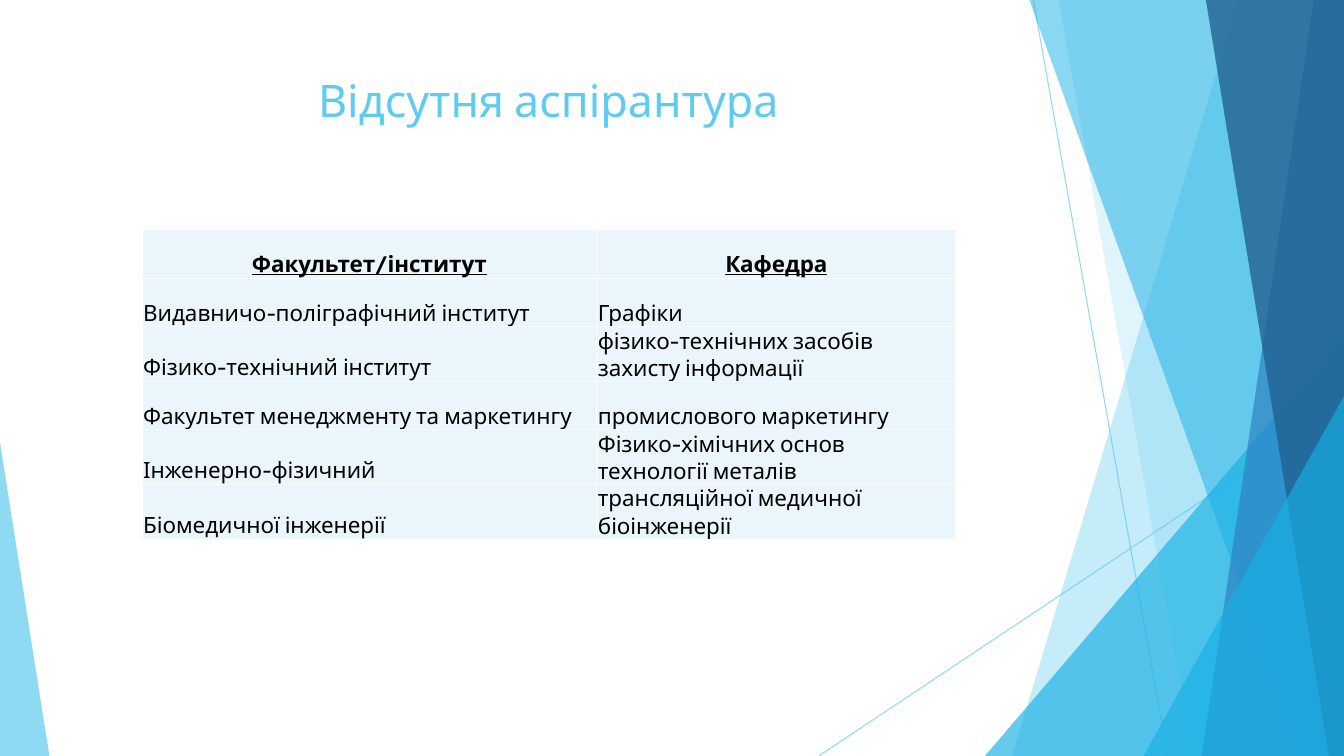
from lxml.etree import SubElement
from pptx import Presentation
from pptx.dml.color import RGBColor
from pptx.enum.shapes import MSO_CONNECTOR, MSO_SHAPE
from pptx.enum.text import MSO_ANCHOR, PP_ALIGN
from pptx.oxml import parse_xml
from pptx.oxml.ns import nsdecls, qn
from pptx.util import Inches, Pt

COLORS = {
    "sky": "5FCBEF",
    "cyan": "17B0E4",
    "blue": "2E83C3",
    "navy": "226292",
    "pale": "EAF6FC",
    "black": "000000",
    "white": "FFFFFF",
}

ROWS = [
    ("Факультет/інститут", "Кафедра"),
    ("Видавничо-поліграфічний інститут", "Графіки"),
    ("Фізико-технічний інститут", "фізико-технічних засобів захисту інформації"),
    ("Факультет менеджменту та маркетингу", "промислового маркетингу"),
    ("Інженерно-фізичний", "Фізико-хімічних основ технології металів"),
    ("Біомедичної інженерії", "трансляційної медичної біоінженерії"),
]


def color(name):
    return RGBColor.from_string(COLORS[name])


def fade(shape, alpha):
    """Set the opacity, in percent, of every colour in the shape."""
    for node in shape._element.spPr.iter(qn("a:srgbClr")):
        SubElement(node, qn("a:alpha"), val=str(alpha * 1000))


def write(frame, text, size=16, ink="black", bold=False, line=False,
          align=PP_ALIGN.LEFT, font="Cabin"):
    frame.word_wrap = True
    para = frame.paragraphs[0]
    para.alignment = align
    run = para.add_run()
    run.text = text
    style = run.font
    style.name, style.size = font, Pt(size)
    style.bold, style.underline = bold, line
    style.color.rgb = color(ink)


class Deck:
    """Draws on one slide; lengths are percent of its width and height."""

    def __init__(self, wide=13.33, high=7.5):
        self.file = Presentation()
        self.file.slide_width = Inches(wide)
        self.file.slide_height = Inches(high)
        self.slide = self.file.slides.add_slide(self.file.slide_layouts[6])
        self.shapes = self.slide.shapes
        self.slide.background.fill.solid()
        self.slide.background.fill.fore_color.rgb = color("white")

    def across(self, share):
        return round(self.file.slide_width * share / 100)

    def down(self, share):
        return round(self.file.slide_height * share / 100)

    def place(self, *shares):
        """Turn x, y pairs of shares into lengths."""
        return [self.down(s) if i % 2 else self.across(s)
                for i, s in enumerate(shares)]

    def paint(self, shape, fill, alpha):
        shape.shadow.inherit = False
        shape.fill.solid()
        shape.fill.fore_color.rgb = color(fill)
        shape.line.fill.background()
        fade(shape, alpha)

    def line(self, *ends):
        link = self.shapes.add_connector(MSO_CONNECTOR.STRAIGHT, *self.place(*ends))
        link.line.width = Pt(0.75)
        link.line.color.rgb = color("sky")
        fade(link, 70)
        SubElement(link._element.spPr, qn("a:effectLst"))

    def pane(self, top, base, fill, alpha):
        """Fill from a slanted left side to the right edge of the slide."""
        start, *rest = [tuple(self.place(*dot)) for dot in
                        ((top, 0), (100, 0), (100, 100), (base, 100))]
        form = self.shapes.build_freeform(*start)
        form.add_line_segments(rest)
        self.paint(form.convert_to_shape(), fill, alpha)

    def wedge(self, left, top, wide, peak, fill, alpha):
        """Stand a triangle on the bottom edge; peak 0 is left, 1 is right."""
        shape = self.shapes.add_shape(
            MSO_SHAPE.ISOSCELES_TRIANGLE, *self.place(left, top, wide, 100 - top))
        shape.adjustments[0] = peak
        self.paint(shape, fill, alpha)

    def title(self, text, *box):
        frame = self.shapes.add_textbox(*self.place(*box)).text_frame
        frame.vertical_anchor = MSO_ANCHOR.TOP
        write(frame, text, size=32, ink="sky", align=PP_ALIGN.CENTER)

    def cell(self, cell, text, head):
        cell.margin_left = cell.margin_right = cell.margin_top = Inches(0.01)
        cell.margin_bottom = 0
        cell.vertical_anchor = MSO_ANCHOR.BOTTOM
        props = cell._tc.get_or_add_tcPr()
        for side in "LRTB":
            props.append(parse_xml(
                f'<a:ln{side} {nsdecls("a")} w="12700"><a:solidFill>'
                f'<a:srgbClr val="{COLORS["white"]}"/></a:solidFill></a:ln{side}>'))
        cell.fill.solid()
        cell.fill.fore_color.rgb = color("pale")
        write(cell.text_frame, text, bold=head, line=head,
              align=PP_ALIGN.CENTER if head else PP_ALIGN.LEFT)

    def table(self, rows, left, top, widths, step):
        box = self.place(left, top, sum(widths), step * len(rows))
        grid = self.shapes.add_table(len(rows), len(widths), *box).table
        for col, wide in zip(grid.columns, widths):
            col.width = self.across(wide)
        for r, row in enumerate(rows):
            for c, text in enumerate(row):
                self.cell(grid.cell(r, c), text, head=r == 0)


def main():
    deck = Deck()
    deck.line(76.89, 0, 86.87, 100)
    deck.line(100, 53.73, 60.92, 100)
    deck.pane(92.12, 75.32, "sky", 36)
    deck.pane(78.77, 88.75, "sky", 20)
    deck.wedge(73.29, 44.4, 26.71, 1, "cyan", 66)
    deck.pane(76.59, 96.85, "cyan", 50)
    deck.pane(97.75, 89.42, "blue", 70)
    deck.pane(89.72, 98.87, "navy", 80)
    deck.wedge(85.07, 52.4, 14.93, 1, "cyan", 66)
    deck.wedge(0, 58.53, 3.68, 0, "sky", 70)
    deck.title("Відсутня аспірантура", 5.55, 8.93, 70.52, 10.8)
    deck.table(ROWS, 10.58, 30.4, (33.83, 26.71), 6.4)
    deck.file.save("out.pptx")


if __name__ == "__main__":
    main()
